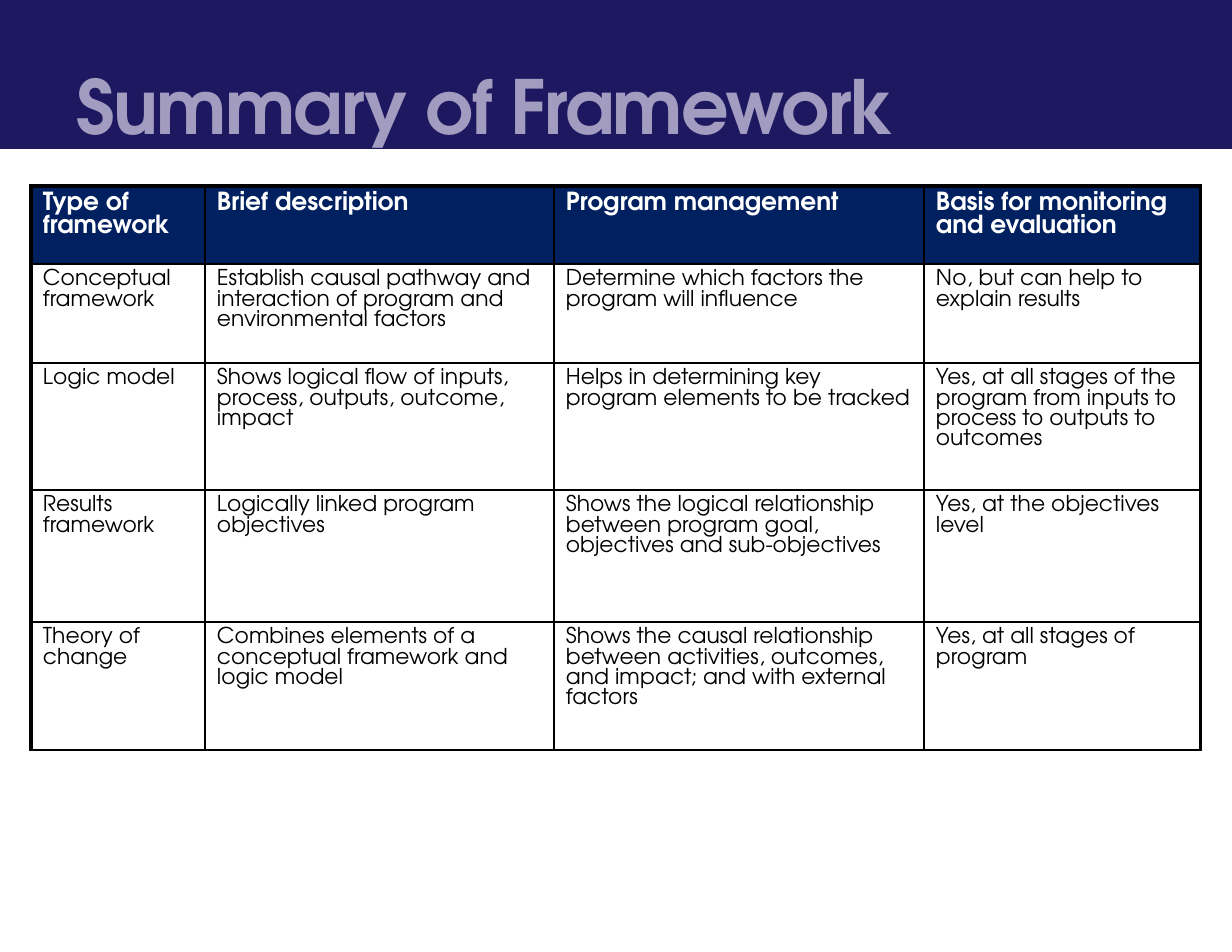
from lxml import etree
from pptx import Presentation
from pptx import util as u
from pptx.dml.color import RGBColor
from pptx.enum import shapes, text
from pptx.oxml.ns import qn

FONT = "TeX Gyre Adventor"
TITLE = "Summary of Framework"
HEADINGS = ("Type of framework", "Brief description", "Program management",
            "Basis for monitoring and evaluation")
FRAMEWORKS = [
    ("Conceptual framework",
     "Establish causal pathway and interaction of program and environmental factors",
     "Determine which factors the program will influence",
     "No, but can help to explain results"),
    ("Logic model",
     "Shows logical flow of inputs, process, outputs, outcome, impact",
     "Helps in determining key program elements to be tracked",
     "Yes, at all stages of the program from inputs to process to outputs to outcomes"),
    ("Results framework",
     "Logically linked program objectives",
     "Shows the logical relationship between program goal, objectives and sub-objectives",
     "Yes, at the objectives level"),
    ("Theory of change",
     "Combines elements of a conceptual framework and logic model",
     "Shows the causal relationship between activities, outcomes, and impact; "
     "and with external factors",
     "Yes, at all stages of program"),
]
COLUMN_WIDTHS = (174, 349, 370, 277)
ROW_HEIGHTS = (78, 99, 127, 132, 128)
THICK, THIN = 2.25, 1


def px(n):
    return u.Emu(round(n * 914400 / 112))


def color(value):
    return RGBColor.from_string(value)


def add_run(paragraph, words, size, ink, bold):
    run = paragraph.add_run()
    run.text = words
    run.font.name = FONT
    run.font.size = u.Pt(size)
    run.font.bold = bold
    run.font.color.rgb = color(ink)
    return run


def set_borders(cell, widths):
    """Draw black cell edges; they must come before the fill."""
    props = cell._tc.get_or_add_tcPr()
    for place, (side, width) in enumerate(widths.items()):
        line = etree.Element(qn("a:ln" + side), w=str(u.Pt(width)))
        fill = etree.SubElement(line, qn("a:solidFill"))
        etree.SubElement(fill, qn("a:srgbClr"), val="000000")
        props.insert(place, line)


def space_before(paragraph, percent):
    space = etree.SubElement(paragraph._p.get_or_add_pPr(), qn("a:spcBef"))
    etree.SubElement(space, qn("a:spcPct"), val=str(percent * 1000))


def add_band(slide):
    band = slide.shapes.add_shape(shapes.MSO_SHAPE.RECTANGLE, 0, 0, px(1232), px(149))
    band.shadow.inherit = False
    band.fill.solid()
    band.fill.fore_color.rgb = color("1E1860")
    band.line.fill.background()


def add_summary(slide):
    rows = [HEADINGS, *FRAMEWORKS]
    summary = slide.shapes.add_table(
        len(rows), len(HEADINGS), px(31), px(186),
        px(sum(COLUMN_WIDTHS)), px(sum(ROW_HEIGHTS))).table
    summary.first_row = summary.horz_banding = False
    for column, width in zip(summary.columns, COLUMN_WIDTHS):
        column.width = px(width)
    for row, height in zip(summary.rows, ROW_HEIGHTS):
        row.height = px(height)

    for r, row in enumerate(rows):
        for c, words in enumerate(row):
            cell = summary.cell(r, c)
            cell.margin_left = cell.margin_right = px(12)
            cell.margin_top = cell.margin_bottom = px(6)
            heading = r == 0
            if heading:
                cell.fill.solid()
                cell.fill.fore_color.rgb = color("002060")
            else:
                cell.fill.background()
            set_borders(cell, {
                "L": THICK if c == 0 else THIN,
                "R": THICK if c == len(row) - 1 else THIN,
                "T": THICK if heading else THIN,
                "B": THIN})
            paragraph = cell.text_frame.paragraphs[0]
            space_before(paragraph, 20)
            add_run(paragraph, words, 16 if heading else 14,
                    "FFFFFF" if heading else "000000", heading)


def add_title(slide):
    frame = slide.shapes.add_textbox(px(75), px(64), px(1116), px(86)).text_frame
    frame.word_wrap = True
    frame.auto_size = text.MSO_AUTO_SIZE.SHAPE_TO_FIT_TEXT
    frame.margin_left = frame.margin_right = frame.margin_top = frame.margin_bottom = 0
    paragraph = frame.paragraphs[0]
    paragraph.line_spacing = u.Pt(54.8)
    paragraph._p.get_or_add_pPr().set("marL", str(px(1)))
    run = add_run(paragraph, TITLE, 48, "A29CC0", True)
    run._r.get_or_add_rPr().set("spc", "-100")  # letters 1 pt closer


def main():
    deck = Presentation()
    deck.slide_width, deck.slide_height = px(1232), px(952)
    slide = deck.slides.add_slide(deck.slide_layouts[6])
    add_band(slide)
    add_summary(slide)
    add_title(slide)
    deck.save("out.pptx")


if __name__ == "__main__":
    main()
